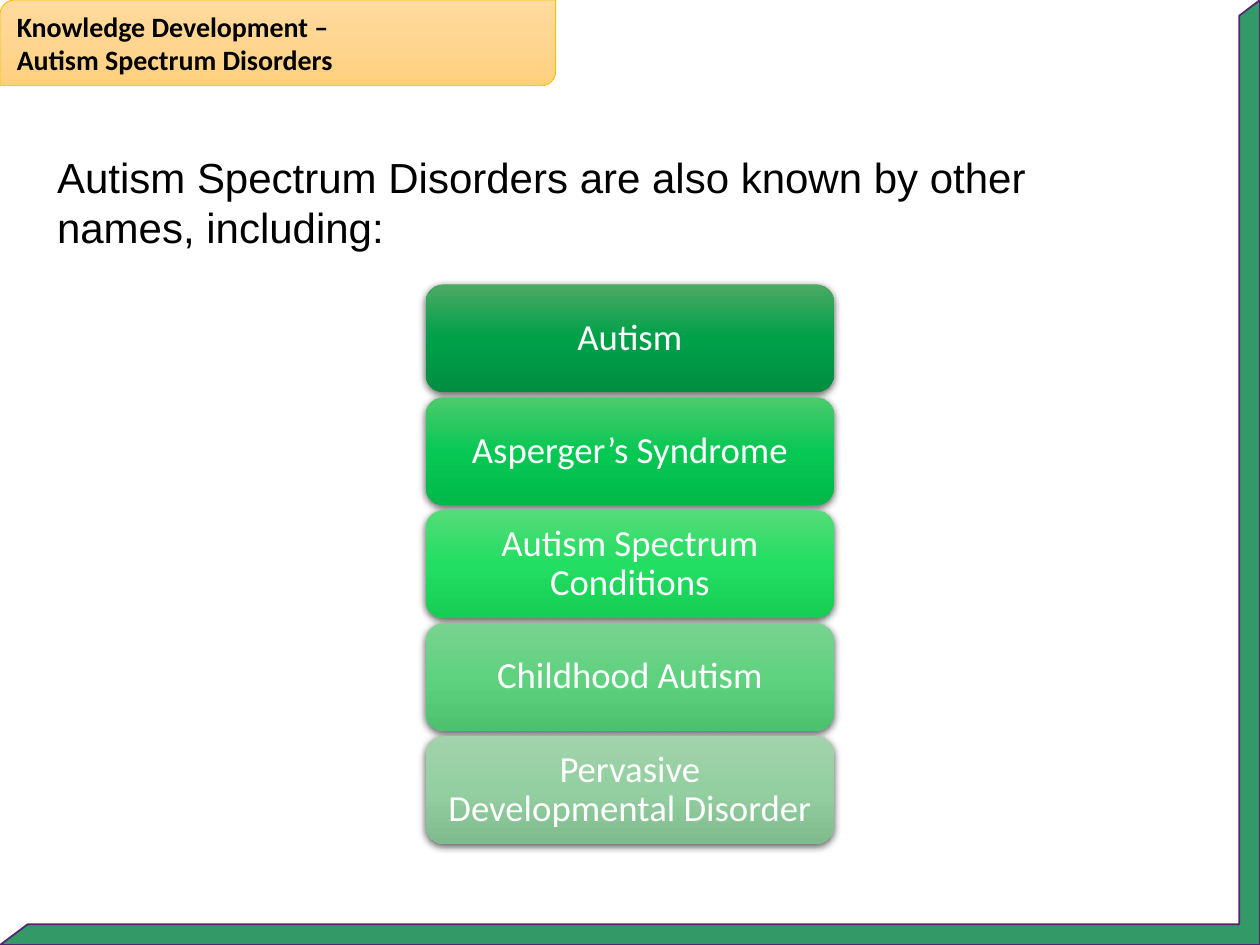
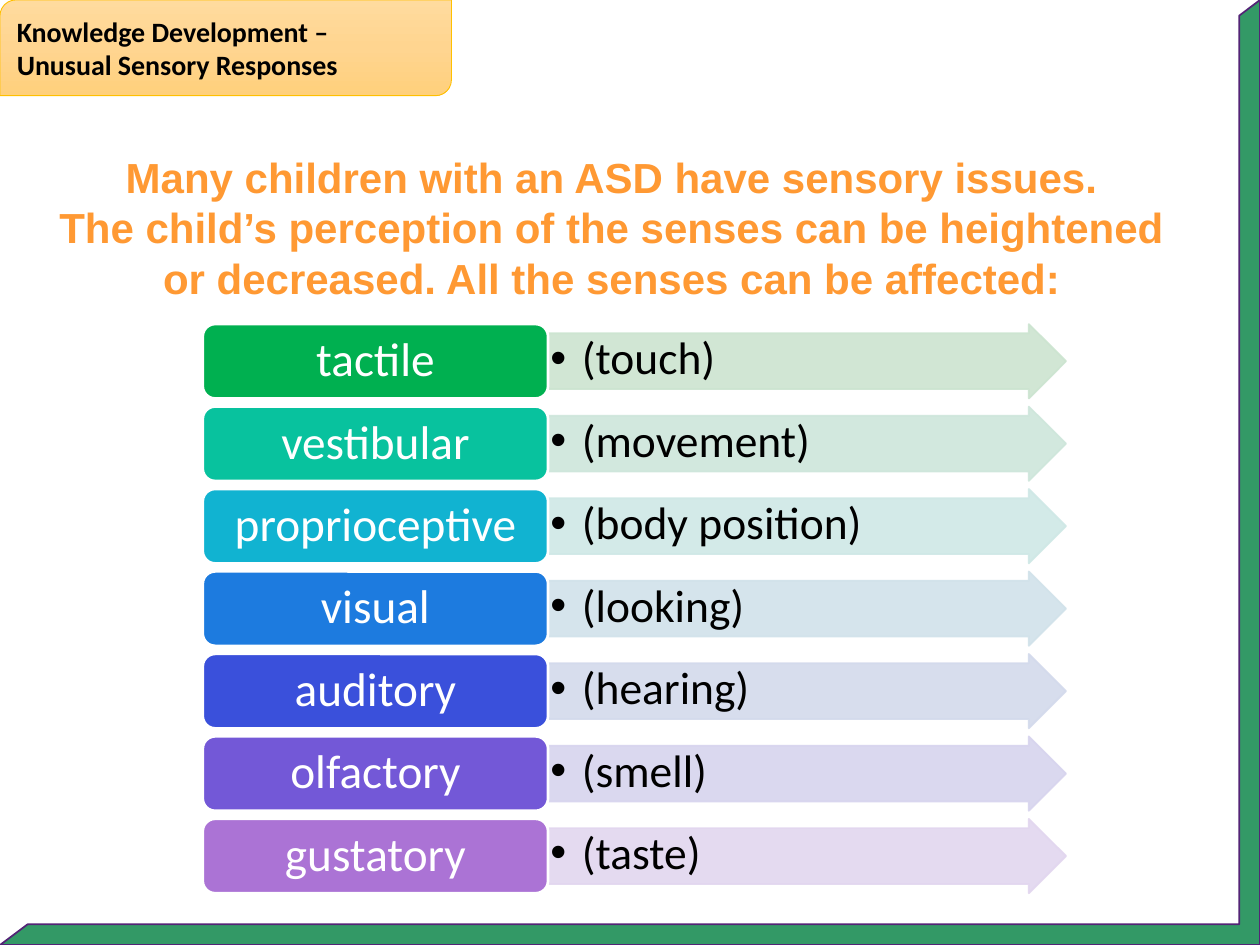
"""Build two training slides on autism spectrum disorders and sensory responses."""
from lxml.etree import SubElement
from pptx import Presentation
from pptx.dml.color import RGBColor
from pptx.enum.shapes import MSO_SHAPE
from pptx.enum.text import MSO_ANCHOR, MSO_AUTO_SIZE, PP_ALIGN
from pptx.oxml.ns import qn
from pptx.util import Pt

WIDTH, HEIGHT = 720, 540
HEADING_FONT, STATEMENT_FONT = "Calibri", "Arial"
BLACK, WHITE, ORANGE = "000000", "FFFFFF", "FF9933"
FRAME_FILL, FRAME_LINE = "339966", "532476"
BAND_GRADIENT, BAND_LINE = ("FFDB9E", "FFD590", "FFD07C"), "FFC000"
CORNER_INSET = 2.4

OTHER_NAMES = [
    ("Autism", ("4BAA63", "00A049", "008E41")),
    ("Asperger’s Syndrome", ("4CCA6C", "08C854", "00B949")),
    ("Autism Spectrum Conditions", ("54DC78", "22DE62", "16CE54")),
    ("Childhood Autism", ("78D390", "5FD27F", "4EC16E")),
    ("Pervasive Developmental Disorder", ("A2D3AC", "93CFA0", "7FBB8C")),
]
SENSES = [
    ("tactile", "(touch)", "00B050", "CCE4D0"),
    ("vestibular", "(movement)", "08C29E", "CEE6DB"),
    ("proprioceptive", "(body position)", "11B3D1", "CFE8E6"),
    ("visual", "(looking)", "1D7BDF", "D1E2EA"),
    ("auditory", "(hearing)", "3A50DB", "D3DAEC"),
    ("olfactory", "(smell)", "7358D7", "D7D4EE"),
    ("gustatory", "(taste)", "AB73D5", "E2D6EF"),
]


def color(hex_code):
    return RGBColor.from_string(hex_code)


def add_child(parent, tag, **attributes):
    return SubElement(parent, qn(tag), attributes)


def add_panel(slide, preset, box, line=None, line_width=1):
    panel = slide.shapes.add_shape(preset, *map(Pt, box))
    panel.shadow.inherit = False
    if line:
        panel.line.color.rgb = color(line)
        panel.line.width = Pt(line_width)
    else:
        panel.line.fill.background()
    return panel


def fill_solid(panel, hex_code):
    panel.fill.solid()
    panel.fill.fore_color.rgb = color(hex_code)


def fill_gradient(panel, hex_codes):
    panel.fill.gradient()
    panel.fill.gradient_angle = 270
    stops = panel._element.spPr.find(".//" + qn("a:gsLst"))
    for stop in list(stops):
        stops.remove(stop)
    for index, hex_code in enumerate(hex_codes):
        stop = add_child(stops, "a:gs", pos=str(index * 50000))
        add_child(stop, "a:srgbClr", val=hex_code)


def add_soft_shadow(panel):
    effects = panel._element.spPr.find(qn("a:effectLst"))
    shadow = add_child(effects, "a:outerShdw", blurRad=str(Pt(4.5)),
                       dist=str(Pt(1.5)), dir="5400000", rotWithShape="0")
    tint = add_child(shadow, "a:srgbClr", val=BLACK)
    add_child(tint, "a:alpha", val="63000")


def make_translucent(panel, percent):
    for tint in panel._element.spPr.iter(qn("a:srgbClr")):
        add_child(tint, "a:alpha", val=str(percent * 1000))


def write(holder, text, font, size, ink, align=PP_ALIGN.LEFT, bold=False,
          anchor=MSO_ANCHOR.MIDDLE, insets=(7.2, 3.6), spacing=1, bullet_indent=0):
    frame = holder.text_frame
    frame.text = text
    frame.word_wrap = True
    frame.auto_size = MSO_AUTO_SIZE.NONE
    frame.vertical_anchor = anchor
    frame.margin_left = frame.margin_right = Pt(insets[0])
    frame.margin_top = frame.margin_bottom = Pt(insets[1])
    for paragraph in frame.paragraphs:
        paragraph.alignment = align
        paragraph.line_spacing = spacing
        paragraph.space_before = Pt(0)
        properties = paragraph._p.get_or_add_pPr()
        properties.set("marL", str(Pt(bullet_indent)))
        properties.set("indent", str(-Pt(bullet_indent)))
        if bullet_indent:
            add_child(properties, "a:buFont", typeface="Arial")
            add_child(properties, "a:buChar", char="•")
        else:
            add_child(properties, "a:buNone")
        for run in paragraph.runs:
            run.font.name = font
            run.font.size = Pt(size)
            run.font.bold = bold
            run.font.color.rgb = color(ink)


def place(holder, left, top, width, height):
    holder.left, holder.top = Pt(left), Pt(top)
    holder.width, holder.height = Pt(width), Pt(height)


def add_master_frame(presentation, slide):
    frame = add_panel(slide, MSO_SHAPE.HALF_FRAME, (0, 0, WIDTH, HEIGHT), FRAME_LINE)
    frame.adjustments[0] = frame.adjustments[1] = 0.022
    frame.rotation = 180
    fill_solid(frame, FRAME_FILL)
    frame._element.nvSpPr.cNvPr.set("id", "20")
    presentation.slide_master.shapes._spTree.insert(2, frame._element)


def add_heading(slide, topic, width, height):
    band = add_panel(slide, MSO_SHAPE.ROUND_2_DIAG_RECTANGLE, (0, 0, width, height),
                     BAND_LINE, 0.5)
    fill_gradient(band, BAND_GRADIENT)
    slide.shapes._spTree.insert(2, band._element)
    place(slide.shapes.title, CORNER_INSET, 0, width - 2 * CORNER_INSET, height)
    write(slide.shapes.title, f"Knowledge Development –\n{topic}",
          HEADING_FONT, 16, BLACK, bold=True)


def add_statement(slide, text, box, ink, **style):
    statement = slide.placeholders[1]
    place(statement, *box)
    write(statement, text, STATEMENT_FONT, 24, ink, anchor=MSO_ANCHOR.TOP, **style)


def add_name_stack(slide):
    top, pitch = 162.5, 64.55
    for row, (name, shades) in enumerate(OTHER_NAMES):
        card = add_panel(slide, MSO_SHAPE.ROUNDED_RECTANGLE,
                         (243.3, top + row * pitch, 233.3, 61.5))
        fill_gradient(card, shades)
        add_soft_shadow(card)
        write(card, name, HEADING_FONT, 21, WHITE, PP_ALIGN.CENTER,
              insets=(6.3, 3.15), spacing=0.9)


def add_sense_rows(slide):
    top, pitch, height = 185.2, 47.12, 42.5
    label_left, label_width, arrow_width = 115.9, 197.3, 296
    for row, (sense, meaning, label_fill, arrow_fill) in enumerate(SENSES):
        row_top = top + row * pitch
        arrow = add_panel(slide, MSO_SHAPE.RIGHT_ARROW,
                          (label_left + label_width, row_top, arrow_width, height),
                          arrow_fill)
        arrow.adjustments[0] = 0.75
        fill_solid(arrow, arrow_fill)
        make_translucent(arrow, 90)
        write(arrow, meaning, HEADING_FONT, 26, BLACK, anchor=MSO_ANCHOR.TOP,
              insets=(1.3, 1.3), spacing=0.9, bullet_indent=18)
        label = add_panel(slide, MSO_SHAPE.ROUNDED_RECTANGLE,
                          (label_left, row_top, label_width, height), WHITE, 1.5)
        fill_solid(label, label_fill)
        write(label, sense, HEADING_FONT, 27, WHITE, PP_ALIGN.CENTER,
              insets=(8, 4), spacing=0.9)


def main():
    presentation = Presentation()
    presentation.slide_width, presentation.slide_height = Pt(WIDTH), Pt(HEIGHT)
    layout = presentation.slide_layouts[1]

    names_slide = presentation.slides.add_slide(layout)
    add_master_frame(presentation, names_slide)
    add_heading(names_slide, "Autism Spectrum Disorders", 317.5, 49)
    add_statement(names_slide,
                  "Autism Spectrum Disorders are also known by other\nnames, including:",
                  (25.4, 82.8, 580, 65.5), BLACK)
    add_name_stack(names_slide)

    senses_slide = presentation.slides.add_slide(layout)
    add_heading(senses_slide, "Unusual Sensory Responses", 258, 54.7)
    add_statement(senses_slide,
                  "Many children with an ASD have sensory issues.\n"
                  "The child’s perception of the senses can be heightened\n"
                  "or decreased. All the senses can be affected:",
                  (23.5, 82.8, 652, 94.5), ORANGE, align=PP_ALIGN.CENTER, bold=True)
    add_sense_rows(senses_slide)

    presentation.save("out.pptx")


if __name__ == "__main__":
    main()
